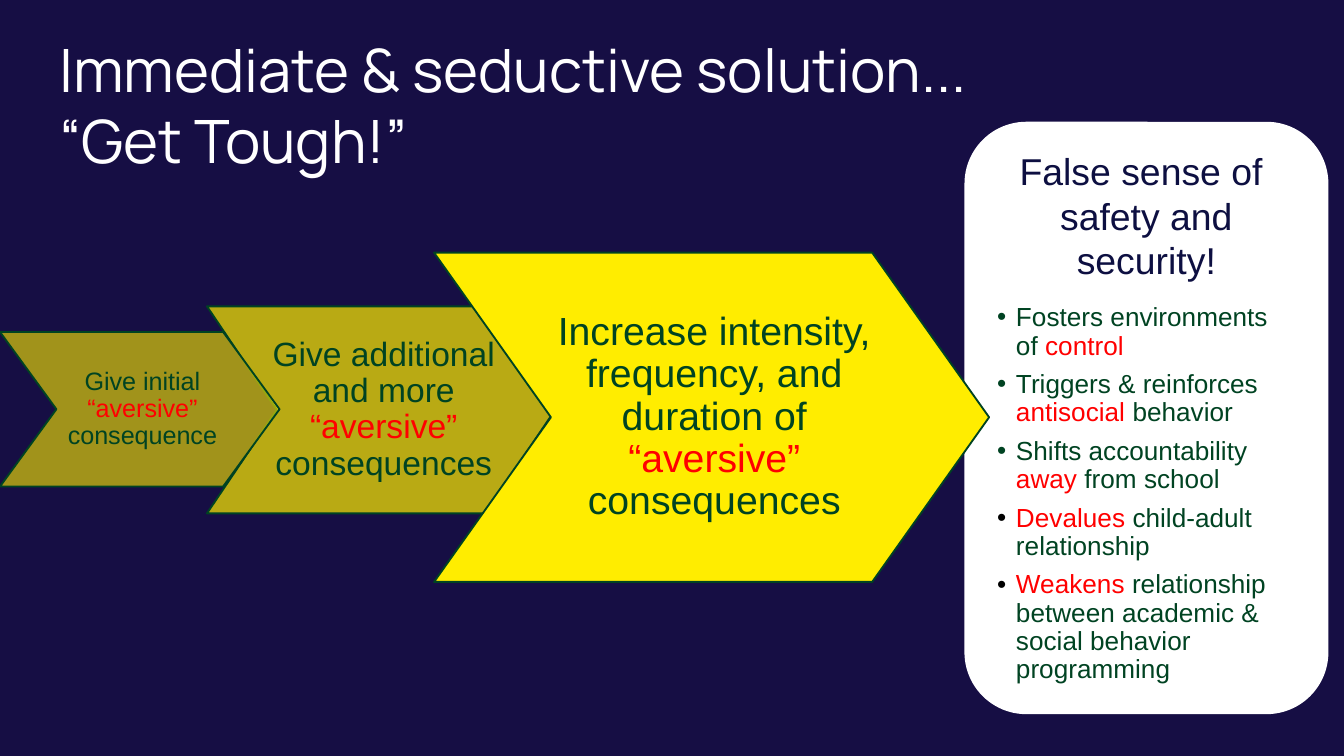
from dataclasses import dataclass

from lxml.etree import SubElement
from pptx import Presentation
from pptx.dml.color import RGBColor
from pptx.enum.shapes import MSO_SHAPE as Shape
from pptx.enum.text import MSO_ANCHOR as Anchor, PP_ALIGN as Align
from pptx.oxml.ns import qn
from pptx.util import Inches, Pt

NAVY, INK, GREEN = "160E44", "0D0F41", "004322"
YELLOW, RED, WHITE, BLACK = "FFED00", "FF0000", "FFFFFF", "000000"

Run = tuple[str, str]  # text, colour


@dataclass
class Step:
    left: float
    top: float
    width: float
    height: float
    notch: float
    opacity: int
    side_insets: tuple[float, float]
    size: float
    runs: list[Run]


@dataclass
class Effect:
    runs: list[Run]
    bullet: str = GREEN


def rgb(color: str) -> RGBColor:
    return RGBColor.from_string(color)


def paint(shape, fill: str, line: str, width: float) -> None:
    shape.shadow.inherit = False
    shape.fill.solid()
    shape.fill.fore_color.rgb = rgb(fill)
    shape.line.color.rgb = rgb(line)
    shape.line.width = Pt(width)


def set_formats(target, **formats) -> None:
    for name, value in formats.items():
        setattr(target, name, value)


def write(paragraph, runs: list[Run], size: float, font: str = "Arial", **formats) -> None:
    set_formats(paragraph, **formats)
    for text, color in runs:
        run = paragraph.add_run()
        run.text = text
        set_formats(run.font, name=font, size=Pt(size))
        run.font.color.rgb = rgb(color)


def add_bullet(paragraph, color: str, indent: float) -> None:
    properties = paragraph._p.get_or_add_pPr()
    properties.set("marL", str(Inches(indent)))
    properties.set("indent", str(-Inches(indent)))
    bullet_color = SubElement(properties, qn("a:buClr"))
    SubElement(bullet_color, qn("a:srgbClr"), val=color)
    SubElement(properties, qn("a:buFont"), typeface="Arial")
    SubElement(properties, qn("a:buChar"), char="•")


def add_step(slide, step: Step) -> None:
    right, bottom = step.left + step.width, step.top + step.height
    middle, shoulder = step.top + step.height / 2, right - step.notch
    outline = [(shoulder, step.top), (right, middle), (shoulder, bottom),
               (step.left, bottom), (step.left + step.notch, middle)]
    builder = slide.shapes.build_freeform(
        Inches(step.left), Inches(step.top), scale=1.0)
    builder.add_line_segments([(Inches(x), Inches(y)) for x, y in outline], close=True)
    chevron = builder.convert_to_shape()
    paint(chevron, YELLOW, GREEN, 1)
    if step.opacity < 100:
        fill_color = chevron._element.spPr.find(qn("a:solidFill"))[0]
        SubElement(fill_color, qn("a:alpha"), val=str(step.opacity * 1000))
    inset_left, inset_right = step.side_insets
    set_formats(chevron.text_frame, word_wrap=True, vertical_anchor=Anchor.MIDDLE,
                margin_left=Inches(inset_left), margin_right=Inches(inset_right),
                margin_top=Inches(0.02), margin_bottom=Inches(0.02))
    write(chevron.text_frame.paragraphs[0], step.runs, step.size,
          alignment=Align.CENTER, line_spacing=0.9)


def add_panel(slide, heading: list[str], effects: list[Effect]) -> None:
    panel = slide.shapes.add_shape(Shape.ROUNDED_RECTANGLE, Inches(7.19),
                                   Inches(0.92), Inches(2.68), Inches(4.38))
    paint(panel, WHITE, WHITE, 2)
    frame = panel.text_frame
    set_formats(frame, word_wrap=True, vertical_anchor=Anchor.TOP)
    for index, text in enumerate(heading):
        line = frame.add_paragraph() if index else frame.paragraphs[0]
        write(line, [(text, INK)], 20, alignment=Align.CENTER)
    for index, effect in enumerate(effects):
        item = frame.add_paragraph()
        add_bullet(item, effect.bullet, 0.14)
        write(item, effect.runs, 14, alignment=Align.LEFT, line_spacing=0.9,
              space_before=Pt(5.5 if index else 11.8))


AVERSIVE = ("“aversive” ", RED)
INITIAL = Step(0, 2.47, 2.08, 1.15, 0.42, 60, (0.49, 0.45), 13.5,
               [("Give initial ", GREEN), AVERSIVE, ("consequence", GREEN)])
ADDITIONAL = Step(1.54, 2.28, 2.55, 1.54, 0.52, 70, (0.46, 0.42), 18,
                  [("Give additional and more ", GREEN), AVERSIVE,
                   ("consequences", GREEN)])
INCREASE = Step(3.23, 1.88, 4.13, 2.45, 0.87, 100, (0.72, 0.68), 21,
                [("Increase intensity, frequency, and duration of ", GREEN),
                 AVERSIVE, ("consequences", GREEN)])

EFFECTS = [
    Effect([("Fosters environments of ", GREEN), ("control", RED)]),
    Effect([("Triggers & reinforces ", GREEN), ("antisocial ", RED),
            ("behavior", GREEN)]),
    Effect([("Shifts accountability ", GREEN), ("away ", RED),
            ("from school", GREEN)]),
    Effect([("Devalues ", RED), ("child-adult relationship", GREEN)], BLACK),
    Effect([("Weakens ", RED),
            ("relationship between academic & social behavior programming", GREEN)],
           BLACK),
]


def main() -> None:
    deck = Presentation()
    deck.slide_width = Inches(10)
    deck.slide_height = deck.slide_width * 9 // 16
    slide = deck.slides.add_slide(deck.slide_layouts[5])
    slide.background.fill.solid()
    slide.background.fill.fore_color.rgb = rgb(NAVY)

    # Escalating steps and their effects; the last step lies over the panel
    ADDITIONAL.width = 2.59
    add_step(slide, ADDITIONAL)
    add_step(slide, INITIAL)
    add_panel(slide, ["False sense of ", "safety and security!"], EFFECTS)
    add_step(slide, INCREASE)

    # Title
    title = slide.shapes.title
    set_formats(title, left=Inches(0.34), top=Inches(0.14),
                width=Inches(9.32), height=Inches(0.63))
    margins = ("margin_left", "margin_right", "margin_top", "margin_bottom")
    set_formats(title.text_frame, word_wrap=True, vertical_anchor=Anchor.TOP,
                **dict.fromkeys(margins, Inches(0.1)))
    headline = title.text_frame.paragraphs[0]
    write(headline, [("Immediate & seductive solution...", WHITE)], 32, "Manrope",
          alignment=Align.LEFT)
    headline.add_line_break()
    write(headline, [("“Get Tough!”", WHITE)], 32, "Manrope")

    deck.save("out.pptx")


if __name__ == "__main__":
    main()
